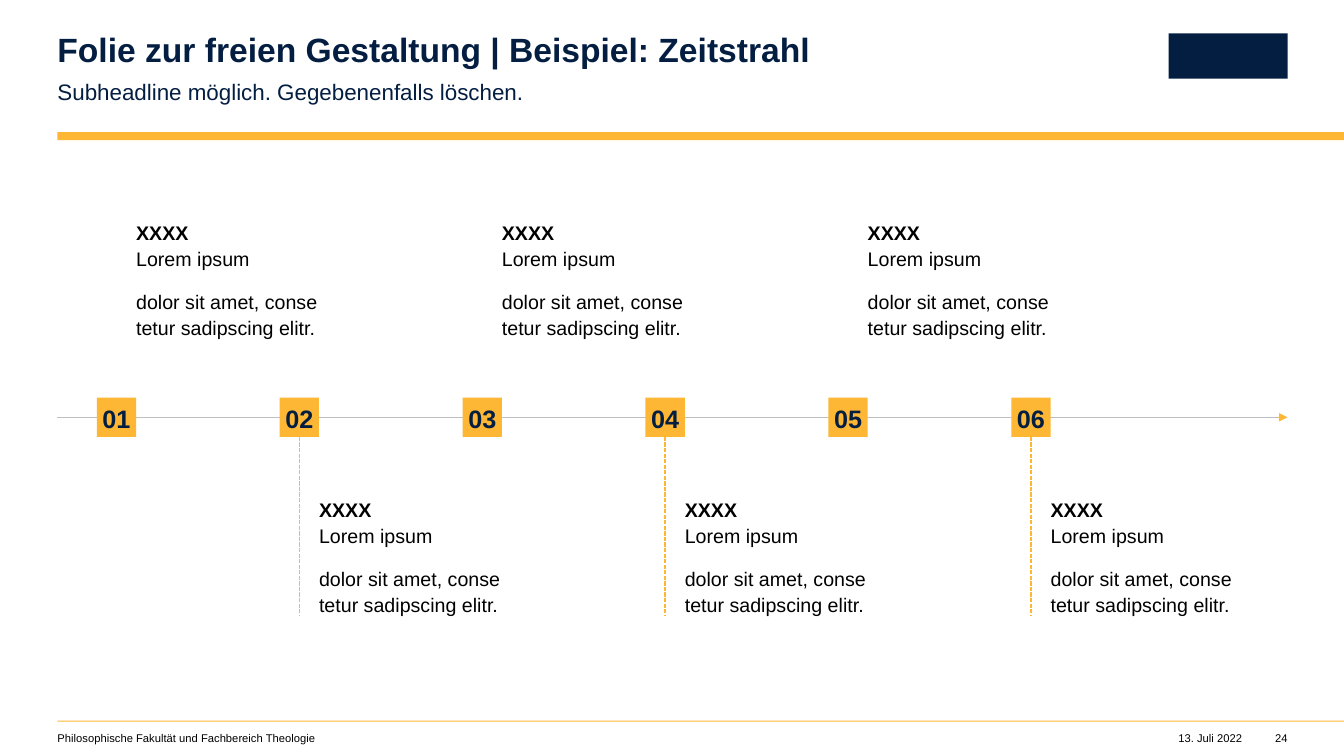
"""Build a timeline slide with six numbered stations."""
from lxml.etree import SubElement
from pptx import Presentation
from pptx.dml.color import RGBColor
from pptx.enum.dml import MSO_LINE
from pptx.enum.shapes import MSO_CONNECTOR, MSO_SHAPE
from pptx.enum.text import MSO_ANCHOR, PP_ALIGN
from pptx.oxml.ns import qn
from pptx.util import Inches, Pt

NAVY = RGBColor(0x04, 0x1E, 0x42)
GOLD = RGBColor(0xFD, 0xB7, 0x35)
GREY = RGBColor(0xBF, 0xBF, 0xBF)
BLACK = RGBColor(0, 0, 0)

WIDE, HIGH = 13.33, 7.5
LEFT, RIGHT = 0.57, 12.77
AXIS, BOX = 4.14, 0.39
FIRST, STEP = 0.96, 9.07 / 5

deck = Presentation()
deck.slide_width, deck.slide_height = Inches(WIDE), Inches(HIGH)
slide = deck.slides.add_slide(deck.slide_layouts[6])
shapes = slide.shapes


def write(shape, lines, size, color, bold=False, align=PP_ALIGN.LEFT, space=1.1):
    frame = shape.text_frame
    frame.word_wrap = True
    frame.margin_left = frame.margin_right = frame.margin_top = frame.margin_bottom = 0
    frame.text = lines
    for para in frame.paragraphs:
        para.alignment, para.line_spacing = align, space
        para.space_after = Pt(12)
        for run in para.runs:
            font = run.font
            font.name, font.size, font.bold = "Arial", Pt(size), bold
            font.color.rgb = color
    return frame


def rule(start, end, color, width=1):
    line = shapes.add_connector(MSO_CONNECTOR.STRAIGHT, *map(Inches, start + end))
    line.line.color.rgb, line.line.width = color, Pt(width)
    SubElement(line._element.spPr, qn("a:effectLst"))
    return line


for x, y, w, h, color in [
    (LEFT, 1.31, WIDE - LEFT, 0.08, GOLD),
    (LEFT, 7.15, WIDE - LEFT, 0.01, GOLD),
    (11.59, 0.33, 1.18, 0.45, NAVY),
]:
    bar = shapes.add_shape(MSO_SHAPE.RECTANGLE, *map(Inches, (x, y, w, h)))
    bar.shadow.inherit = False
    bar.fill.solid()
    bar.fill.fore_color.rgb = color
    bar.line.fill.background()

for x, y, w, h, words, size, color, bold, align, space in [
    (LEFT, 0.33, 9, 0.36, "Folie zur freien Gestaltung | Beispiel: Zeitstrahl",
     24, NAVY, True, PP_ALIGN.LEFT, 0.9),
    (LEFT, 0.75, 7.49, 0.27, "Subheadline möglich. Gegebenenfalls löschen.",
     16, NAVY, False, PP_ALIGN.LEFT, 1.1),
    (LEFT, 7.26, 5.98, 0.13, "Philosophische Fakultät und Fachbereich Theologie",
     8, BLACK, False, PP_ALIGN.LEFT, 1),
    (11.32, 7.26, 1, 0.13, "13. Juli 2022", 8, BLACK, False, PP_ALIGN.RIGHT, 1),
    (12.47, 7.26, 0.3, 0.13, "24", 8, BLACK, False, PP_ALIGN.RIGHT, 1),
]:
    label = shapes.add_textbox(*map(Inches, (x, y, w, h)))
    write(label, words, size, color, bold, align, space)

rule((LEFT, AXIS), (RIGHT - 0.1, AXIS), GREY)
tip = rule((RIGHT - 0.1, AXIS), (RIGHT, AXIS), GOLD)
SubElement(tip.line._get_or_add_ln(), qn("a:tailEnd"), type="triangle")

for i in range(6):
    x = FIRST + i * STEP
    below = i % 2
    box = shapes.add_shape(
        MSO_SHAPE.RECTANGLE, *map(Inches, (x, AXIS - BOX / 2, BOX, BOX)))
    box.shadow.inherit = False
    box.fill.solid()
    box.fill.fore_color.rgb = GOLD
    box.line.fill.background()
    frame = write(box, f"{i + 1:02}", 18, NAVY, True, PP_ALIGN.CENTER)
    frame.vertical_anchor = MSO_ANCHOR.MIDDLE

    left, top = (x + BOX, 2.17) if not below else (x + BOX, 4.92)
    note = shapes.add_textbox(*map(Inches, (left, top, 1.95, 1.18)))
    frame = write(
        note, "XXXX\vLorem ipsum\ndolor sit amet, conse\vtetur sadipscing elitr.",
        14, BLACK)
    frame.paragraphs[0].runs[0].font.bold = True

    if below:
        mid = x + BOX / 2
        stem = rule((mid, AXIS + BOX / 2), (mid, 6.11), GREY if i == 1 else GOLD)
        stem.line.dash_style = MSO_LINE.SQUARE_DOT

deck.save("out.pptx")
